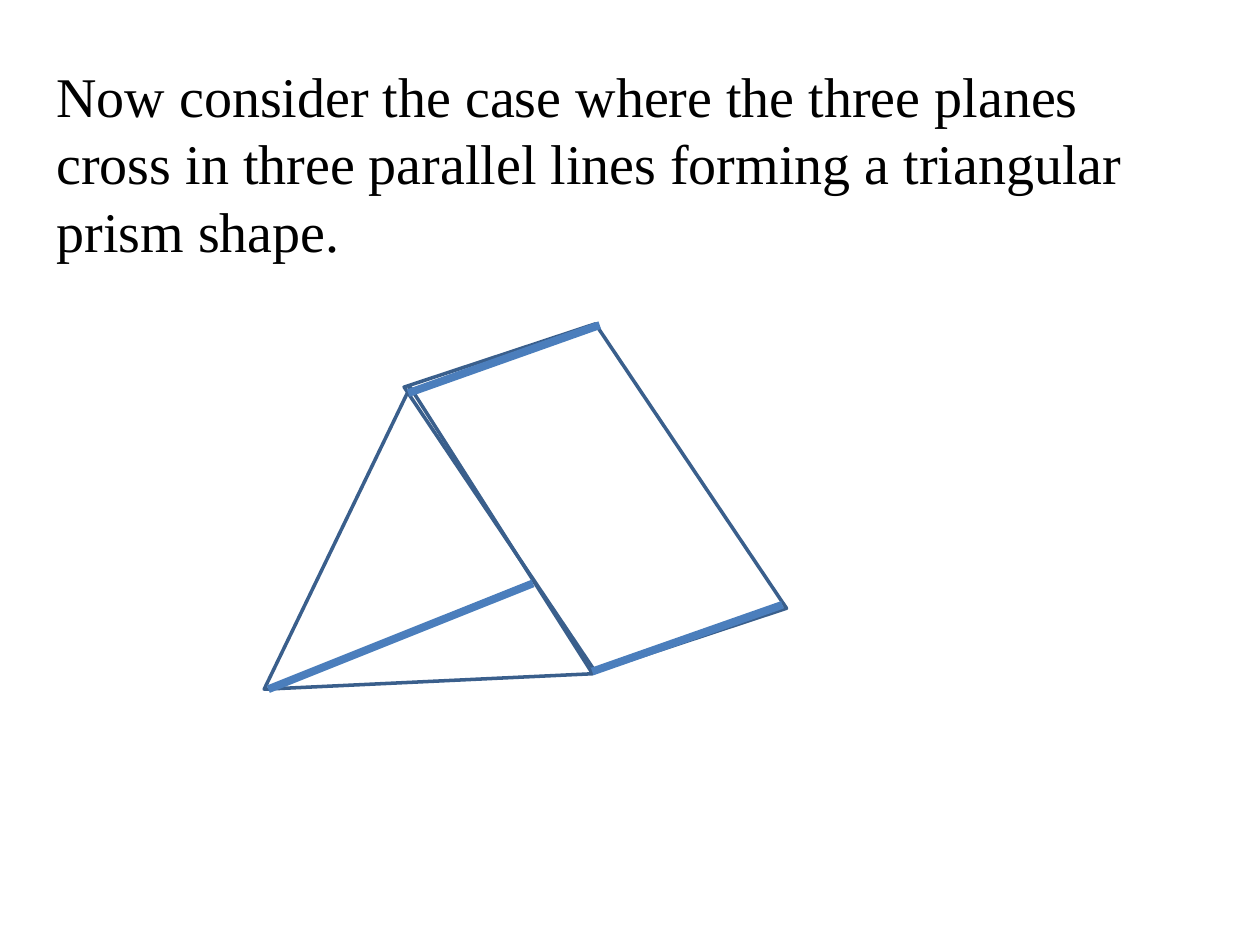
from pptx import Presentation
from pptx.dml.color import RGBColor
from pptx.enum import shapes, text
from pptx.oxml import ns
from pptx.util import Inches, Pt
from lxml import etree

BLACK = RGBColor(0x00, 0x00, 0x00)
OUTLINE = RGBColor(0x3A, 0x5F, 0x8C)
EDGE = RGBColor(0x4B, 0x7E, 0xBC)

STATEMENT = (
    "Now consider the case where the three planes cross in three "
    "parallel lines forming a triangular prism shape."
)
FACES = [
    (shapes.MSO_SHAPE.PARALLELOGRAM, (3.15, 3.18, 3.15, 1.54), 236.1, 0.279),
    (shapes.MSO_SHAPE.ISOSCELES_TRIANGLE, (2.04, 3.07, 2.61, 2.34), 357.3, 0.487),
]
PARALLEL_EDGES = [
    ((2.13, 5.47), (4.23, 4.63)),
    ((4.7, 5.33), (6.21, 4.8)),
    ((3.24, 3.12), (4.76, 2.58)),
]


def inches(values):
    return [Inches(value) for value in values]


def add_statement(slide):
    box = slide.shapes.add_textbox(*inches((0.35, 0.44, 9.21, 1.72)))
    frame = box.text_frame
    frame.word_wrap = True
    frame.auto_size = text.MSO_AUTO_SIZE.SHAPE_TO_FIT_TEXT
    frame.text = STATEMENT
    font = frame.paragraphs[0].runs[0].font
    font.name = "Times New Roman"
    font.size = Pt(32)
    font.color.rgb = BLACK


def add_face(prism, kind, box, rotation, adjustment):
    face = prism.shapes.add_shape(kind, *inches(box))
    face.adjustments[0] = adjustment
    face.rotation = rotation
    face.shadow.inherit = False
    face.fill.background()
    face.line.color.rgb = OUTLINE
    face.line.width = Pt(2)


def add_edge(prism, start, end):
    edge = prism.shapes.add_connector(
        shapes.MSO_CONNECTOR.STRAIGHT, *inches(start + end)
    )
    edge.line.color.rgb = EDGE
    edge.line.width = Pt(4.5)
    etree.SubElement(edge._element.spPr, ns.qn("a:effectLst"))


def main():
    presentation = Presentation()
    presentation.slide_width = Inches(10)
    presentation.slide_height = Inches(7.5)
    slide = presentation.slides.add_slide(presentation.slide_layouts[6])
    add_statement(slide)
    prism = slide.shapes.add_group_shape()
    for face in FACES:
        add_face(prism, *face)
    for start, end in PARALLEL_EDGES:
        add_edge(prism, start, end)
    presentation.save("out.pptx")


if __name__ == "__main__":
    main()
